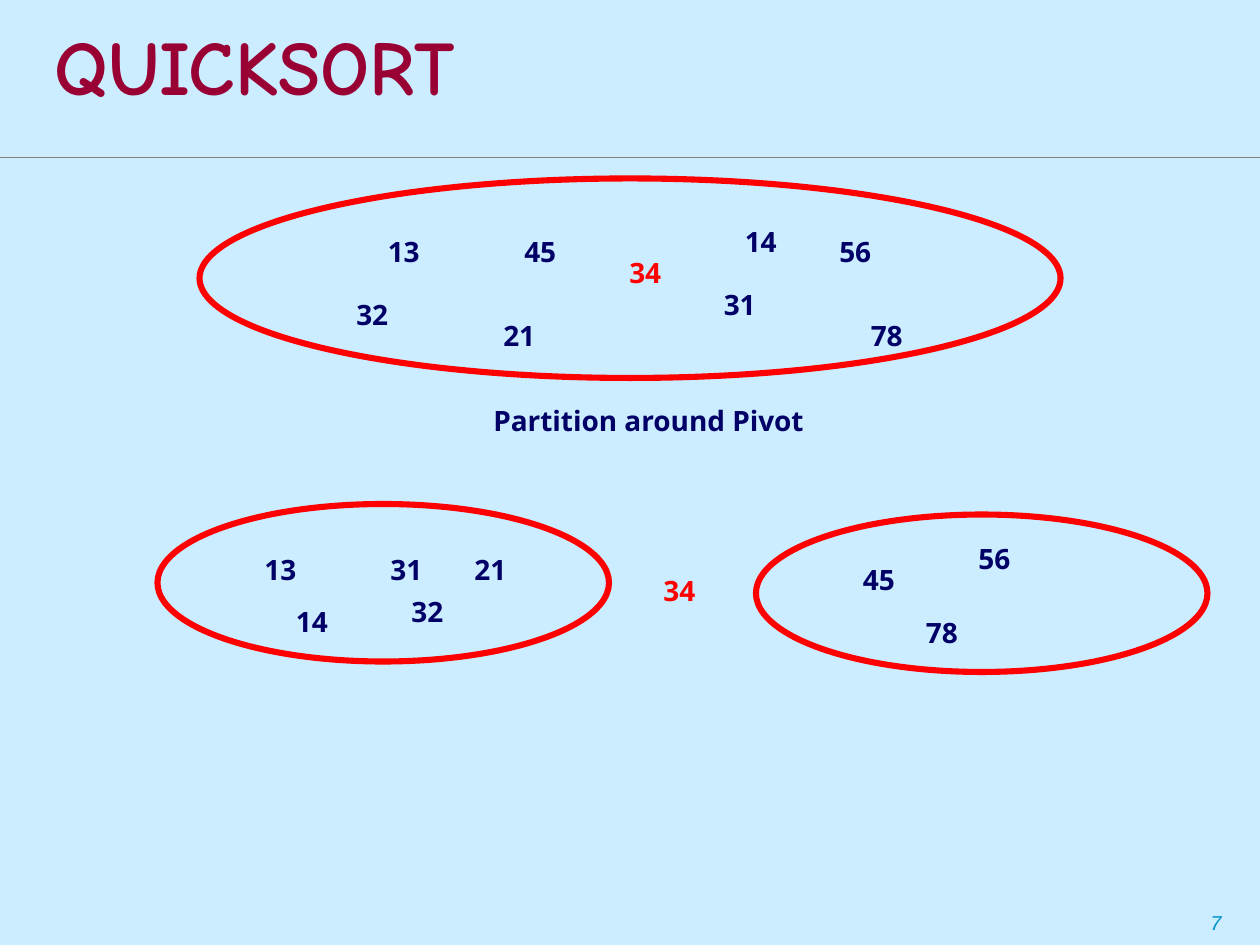
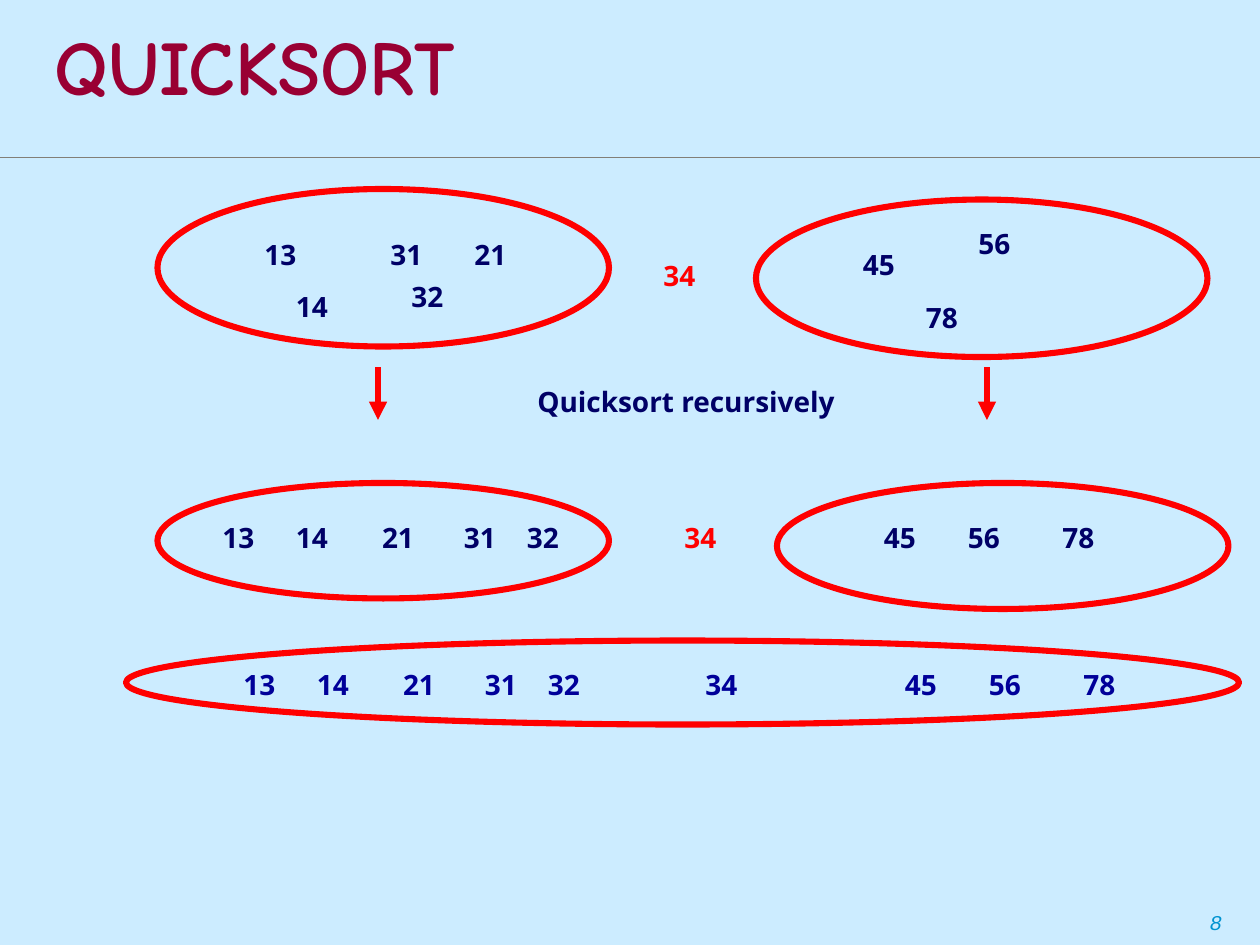
from pptx import Presentation
from pptx.dml.color import RGBColor
from pptx.enum.shapes import MSO_CONNECTOR, MSO_SHAPE
from pptx.enum.text import MSO_ANCHOR, MSO_AUTO_SIZE, PP_ALIGN
from pptx.oxml.ns import qn
from pptx.util import Inches, Pt
from lxml.etree import SubElement

# Shared style
SKY, MAROON, NAVY, BLUE, RED = "CCECFF", "990033", "000066", "000099", "FF0000"
RULE, PAGE = "827F77", "0093D0"
TITLE_FONT, BODY_FONT, PAGE_FONT = "Comic Neue", "Open Sans", "Courier New"
UNITS = 12  # grid units per inch: the slide is 120 x 90 units
PIVOT = 34

# Number sets: ovals as (x, y, w, h), numbers as (value, x, y), in grid units
UNSORTED = {
    "ovals": [(19, 17, 82, 19)],
    "numbers": [(13, 35.75, 21.75), (45, 48.75, 21.75), (34, 58.75, 23.75),
                (14, 69.75, 20.75), (56, 78.75, 21.75), (32, 32.75, 27.75),
                (21, 46.75, 29.75), (31, 67.75, 26.75), (78, 81.75, 29.75)],
}
PARTITIONED = {
    "ovals": [(15, 18, 43, 15), (72, 19, 43, 15)],
    "numbers": [(13, 24, 22), (31, 36, 22), (21, 44, 22), (14, 27, 27),
                (32, 38, 26), (34, 62, 24),
                (45, 81, 23), (56, 92, 21), (78, 87, 28)],
}
SORTED_ROW = [(13, 20, 49), (14, 27, 49), (21, 35.2, 49), (31, 43, 49),
              (32, 49, 49), (34, 64, 49), (45, 83, 49), (56, 91, 49),
              (78, 100, 49)]
SORTED_PARTS = {"ovals": [(15, 46, 43, 11), (74, 46, 43, 12)],
                "numbers": SORTED_ROW}
MERGED = {"ovals": [(12, 61, 106, 8)],
          "numbers": [(n, x + 2, y + 14) for n, x, y in SORTED_ROW],
          "color": BLUE, "pivot": BLUE}

# Slides: sets come with the number of units they are moved down
SLIDES = [
    {"title": "QUICKSORT", "page": 7,
     "sets": [(UNSORTED, 0), (PARTITIONED, 30)],
     "caption": ("Partition around Pivot", 45.8, 37.8, 32.5), "arrows": []},
    {"title": "QUICKSORT", "page": 8,
     "sets": [(PARTITIONED, 0), (SORTED_PARTS, 0), (MERGED, 0)],
     "caption": ("Quicksort recursively", 50, 36, 31.8),
     "arrows": [(36, 35, 40), (94, 35, 40)]},
]


def rgb(color):
    return RGBColor.from_string(color)


def grid(*units):
    return [Inches(u / UNITS) for u in units]


def format_text(p, font, size, color, bold=False, italic=False):
    for r in p.runs:
        f = r.font
        f.name, f.size, f.bold, f.italic = font, Pt(size), bold, italic
        f.color.rgb = rgb(color)


def add_label(s, text, x, y, w=5.9, color=NAVY):
    tf = s.shapes.add_textbox(*grid(x, y, w, 4.4)).text_frame
    tf.word_wrap = False
    tf.auto_size = MSO_AUTO_SIZE.SHAPE_TO_FIT_TEXT
    tf.text = str(text)
    format_text(tf.paragraphs[0], BODY_FONT, 16, color, bold=True)


def add_oval(s, x, y, w, h):
    sp = s.shapes.add_shape(MSO_SHAPE.OVAL, *grid(x, y, w, h))
    sp.shadow.inherit = False
    sp.fill.background()
    sp.line.color.rgb = rgb(RED)
    sp.line.width = Pt(3.5)


def add_line(s, x1, y1, x2, y2, color, width, arrow=False):
    line = s.shapes.add_connector(MSO_CONNECTOR.STRAIGHT, *grid(x1, y1, x2, y2))
    line.line.color.rgb = rgb(color)
    line.line.width = Pt(width)
    if arrow:
        SubElement(line.line._get_or_add_ln(), qn("a:tailEnd"), type="triangle")
    SubElement(line._element.spPr, qn("a:effectLst"))


def add_set(s, numbers, down):
    for x, y, w, h in numbers["ovals"]:
        add_oval(s, x, y + down, w, h)
    for n, x, y in numbers["numbers"]:
        color = (numbers.get("pivot", RED) if n == PIVOT
                 else numbers.get("color", NAVY))
        add_label(s, n, x, y + down, color=color)


def add_frame(s, title, page):
    # Page number at the bottom right and rule under the title
    tf = s.shapes.add_textbox(*grid(0, 86, 120, 3.6)).text_frame
    tf.word_wrap = True
    tf.vertical_anchor = MSO_ANCHOR.BOTTOM
    tf.margin_left = Inches(9.6)
    tf.text = str(page)
    format_text(tf.paragraphs[0], PAGE_FONT, 12, PAGE, italic=True)
    add_line(s, 0, 15, 120, 15, RULE, 0.75)

    # Title
    sp = s.shapes.title
    sp.left, sp.top, sp.width, sp.height = grid(4, 0.8, 116, 12)
    tf = sp.text_frame
    tf.text = title
    tf.vertical_anchor = MSO_ANCHOR.MIDDLE
    p = tf.paragraphs[0]
    p.alignment = PP_ALIGN.LEFT
    p.line_spacing = 0.86
    format_text(p, TITLE_FONT, 44, MAROON, bold=True)


def main():
    prs = Presentation()
    prs.slide_width, prs.slide_height = Inches(10), Inches(7.5)
    fill = prs.slide_master.background.fill
    fill.solid()
    fill.fore_color.rgb = rgb(SKY)

    for content in SLIDES:
        s = prs.slides.add_slide(prs.slide_layouts[5])
        add_frame(s, content["title"], content["page"])
        for numbers, down in content["sets"]:
            add_set(s, numbers, down)
        for x, top, bottom in content["arrows"]:
            add_line(s, x, top, x, bottom, RED, 3.5, arrow=True)
        add_label(s, *content["caption"])

    prs.save("out.pptx")


if __name__ == "__main__":
    main()
